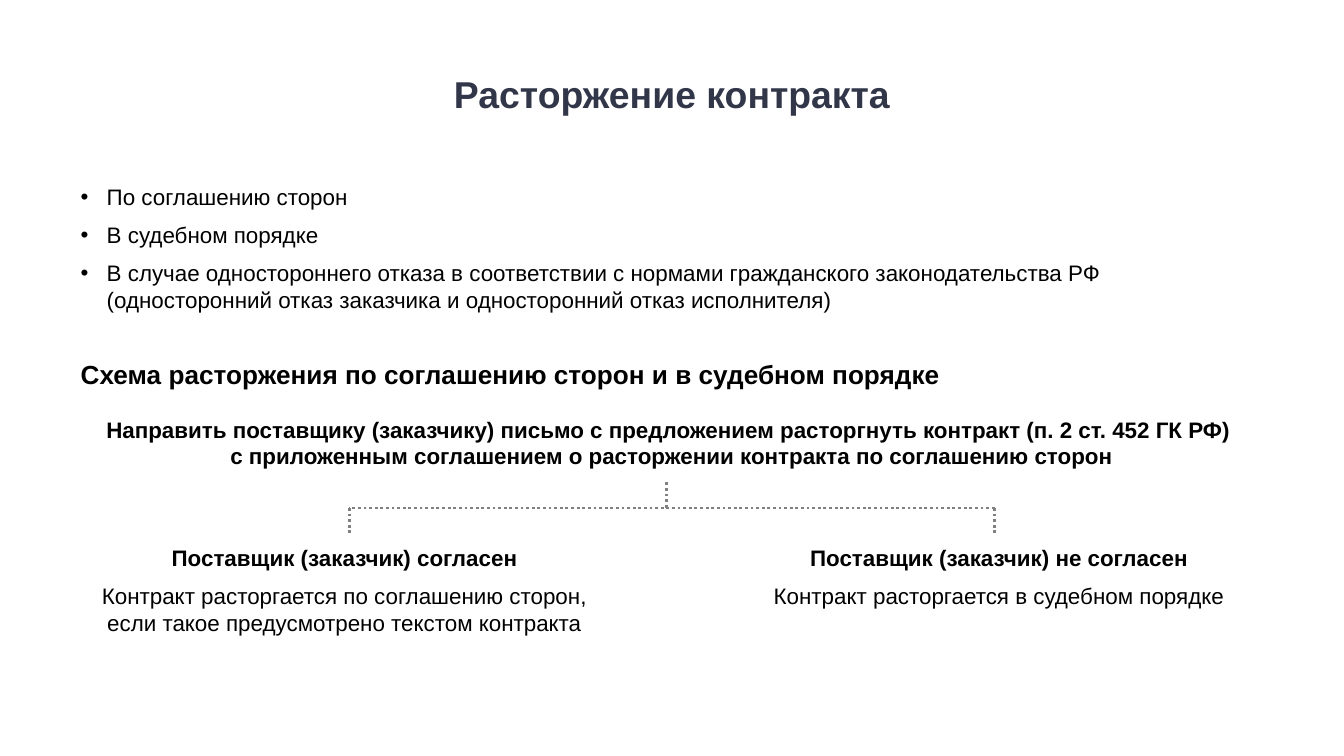
from dataclasses import dataclass

from lxml import etree
from pptx import Presentation
from pptx.dml.color import RGBColor
from pptx.enum.dml import MSO_LINE
from pptx.enum.shapes import MSO_CONNECTOR
from pptx.enum.text import MSO_ANCHOR, MSO_AUTO_SIZE, PP_ALIGN
from pptx.oxml.ns import qn
from pptx.util import Emu, Inches, Pt

CENTER, LEFT = PP_ALIGN.CENTER, PP_ALIGN.LEFT
TOP, MIDDLE = MSO_ANCHOR.TOP, MSO_ANCHOR.MIDDLE
NO_FIT = MSO_AUTO_SIZE.NONE
STRAIGHT = MSO_CONNECTOR.STRAIGHT
DOTTED = MSO_LINE.ROUND_DOT

FONT = "Arial"
NAVY, BLACK, GRAY = "323649", "000000", "808080"
COLUMNS, ROWS = 100, 56.25  # square grid over a 16:9 slide
CELL = Inches(0.1)
MARGIN, CONTENT_WIDTH = 5, 90
BRANCH_WIDTH = 39.2
BULLET_INDENT = 1.94


@dataclass
class Box:
    col: float
    row: float
    cols: float
    rows: float


@dataclass
class Line:
    text: str
    size: int = 12
    bold: bool = False
    align: PP_ALIGN = CENTER
    before: int = 0
    bullet: bool = False
    color: str = BLACK


def cells(count: float) -> Emu:
    return Emu(round(count * CELL))


def rgb(color: str) -> RGBColor:
    return RGBColor.from_string(color)


def place(sp, box: Box) -> None:
    sp.left, sp.top = cells(box.col), cells(box.row)
    sp.width, sp.height = cells(box.cols), cells(box.rows)


def set_bullet(p, shown: bool) -> None:
    pPr = p._p.get_or_add_pPr()
    indent = cells(BULLET_INDENT) if shown else 0
    pPr.set("marL", str(indent))
    pPr.set("indent", str(-indent))
    if shown:
        etree.SubElement(pPr, qn("a:buFont")).set("typeface", FONT)
        etree.SubElement(pPr, qn("a:buChar")).set("char", "•")
    else:
        etree.SubElement(pPr, qn("a:buNone"))


def write(sp, lines: list[Line], anchor: MSO_ANCHOR = TOP) -> None:
    tf = sp.text_frame
    tf.word_wrap = True
    tf.auto_size = NO_FIT
    tf.vertical_anchor = anchor
    for i, line in enumerate(lines):
        p = tf.add_paragraph() if i else tf.paragraphs[0]
        set_bullet(p, line.bullet)
        p.alignment = line.align
        p.space_before = Pt(line.before)
        for j, part in enumerate(line.text.split("\n")):
            if j:
                p.add_line_break()
            r = p.add_run()
            r.text = part
            r.font.name = FONT
            r.font.size = Pt(line.size)
            r.font.bold = line.bold
            r.font.color.rgb = rgb(line.color)


def add_text(s, box: Box, lines: list[Line]) -> None:
    sp = s.shapes.add_textbox(0, 0, 0, 0)
    place(sp, box)
    write(sp, lines)


def add_dotted_line(s, x1: float, y1: float, x2: float, y2: float) -> None:
    line = s.shapes.add_connector(STRAIGHT, *map(cells, (x1, y1, x2, y2)))
    line.line.color.rgb = rgb(GRAY)
    line.line.width = Pt(1.5)
    line.line.dash_style = DOTTED
    etree.SubElement(line._element.spPr, qn("a:effectLst"))


def add_fork(s, stem: float, ends: tuple[float, float], row: float, drop: float) -> None:
    """Draw a stem down to a bar at the row, with a drop at each end."""
    left, right = ends
    for col in ends:
        add_dotted_line(s, col, row, col, row + drop)
    add_dotted_line(s, right, row, left, row)
    add_dotted_line(s, stem, row - drop, stem, row)


def main() -> None:
    prs = Presentation()
    prs.slide_width, prs.slide_height = cells(COLUMNS), cells(ROWS)
    s = prs.slides.add_slide(prs.slide_layouts[1])

    title, body = s.placeholders
    place(title, Box(MARGIN, 2.3, CONTENT_WIDTH, 9.4))
    write(title, [Line("Расторжение контракта", 20, True, color=NAVY)], MIDDLE)

    grounds = [
        "По соглашению сторон",
        "В судебном порядке",
        "В случае одностороннего отказа в соответствии с нормами гражданского "
        "законодательства РФ (односторонний отказ заказчика и односторонний "
        "отказ исполнителя)",
    ]
    items = [Line(text, align=LEFT, before=6 if i else 0, bullet=True)
             for i, text in enumerate(grounds)]
    heading = Line("Схема расторжения по соглашению сторон и в судебном порядке",
                   14, True, LEFT, 24)
    place(body, Box(MARGIN, 13.13, CONTENT_WIDTH, 18.4))
    write(body, items + [heading])

    add_text(s, Box(MARGIN, 30.44, CONTENT_WIDTH, 5.4), [
        Line("Направить поставщику (заказчику) письмо с предложением расторгнуть "
             "контракт (п. 2 ст. 452 ГК РФ) \nс приложенным соглашением о "
             "расторжении контракта по соглашению сторон", bold=True)])

    add_fork(s, stem=49.6, ends=(26, 74), row=37.8, drop=1.9)

    branches = [
        (6.04, "Поставщик (заказчик) согласен",
         "Контракт расторгается по соглашению сторон,\n"
         "если такое предусмотрено текстом контракта"),
        (54.74, "Поставщик (заказчик) не согласен",
         "Контракт расторгается в судебном порядке"),
    ]
    for col, answer, outcome in branches:
        add_text(s, Box(col, 40, BRANCH_WIDTH, 7.5),
                 [Line(answer, bold=True), Line(outcome, before=6)])

    prs.save("out.pptx")


if __name__ == "__main__":
    main()
